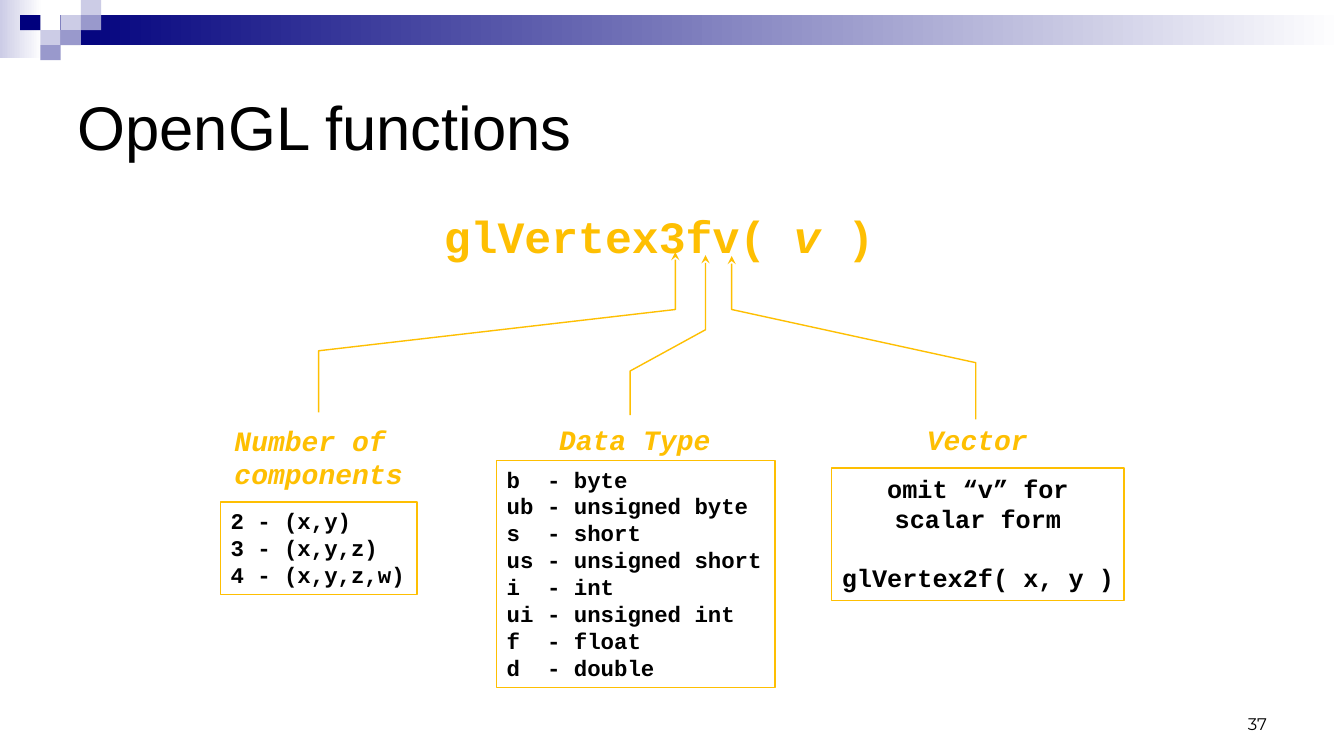
from lxml import etree
from pptx import Presentation
from pptx.dml.color import RGBColor
from pptx.enum.shapes import MSO_SHAPE as Shape
from pptx.enum.text import MSO_ANCHOR as Anchor, MSO_AUTO_SIZE as AutoSize, PP_ALIGN as Align
from pptx.oxml.ns import qn
from pptx.util import Cm, Pt

COLORS = {
    "navy": "00007D",
    "mid": "9999CC",
    "light": "CCCCE6",
    "white": "FFFFFF",
    "gold": "FEBF02",
    "black": "000000",
}
CODE_FONT = "Courier New"

# Header mosaic: cell size in cm, then column, row and colour of each tile
TILE_WIDTH, TILE_HEIGHT = 0.51, 0.38
TILES = [
    (3, 1, "light"), (4, 0, "light"), (4, 1, "mid"), (2, 2, "light"),
    (1, 1, "navy"), (3, 2, "mid"), (2, 3, "mid"),
]

# Headings and panels: text lines and box (left, top, width, height in cm)
HEADINGS = [
    (["Number of", "components"], (5.66, 10.54, 4.8, 1.96)),
    (["Data Type"], (13.84, 10.52, 4.37, 1.12)),
    (["Vector"], (23.11, 10.52, 3.07, 1.12)),
]
COMPONENTS = ["2 - (x,y)", "3 - (x,y,z)", "4 - (x,y,z,w)"]
DATA_TYPES = [
    ("b", "byte"), ("ub", "unsigned byte"), ("s", "short"), ("us", "unsigned short"),
    ("i", "int"), ("ui", "unsigned int"), ("f", "float"), ("d", "double"),
]
VECTOR_NOTE = ["omit “v” for", "scalar form", "glVertex2f( x, y )"]

# Arrows: tip x, tip y, upper bend y, foot x, lower bend y, foot y in cm
ARROWS = [
    (17.02, 6.35, 7.8, 8.03, 8.84, 10.39),
    (17.78, 6.43, 8.31, 15.88, 9.35, 10.46),
    (18.44, 6.45, 7.8, 24.59, 9.14, 10.57),
]


def color(name):
    return RGBColor.from_string(COLORS[name])


def lengths(box):
    return [Cm(value) for value in box]


def add_run(paragraph, text, size, color_name, font=CODE_FONT, bold=True, italic=False):
    run = paragraph.add_run()
    run.text = text
    run.font.name = font
    run.font.size = Pt(size)
    run.font.bold = bold
    run.font.italic = italic
    run.font.color.rgb = color(color_name)


def add_lines(frame, lines, size, color_name, align=Align.LEFT, italic=False):
    frame.word_wrap = False
    for index, line in enumerate(lines):
        paragraph = frame.paragraphs[0] if index == 0 else frame.add_paragraph()
        paragraph.alignment = align
        add_run(paragraph, line, size, color_name, italic=italic)


def add_block(slide, box, start, end=None):
    """Add a borderless rectangle, plain or fading from left to right."""
    shape = slide.shapes.add_shape(Shape.RECTANGLE, *lengths(box))
    shape.shadow.inherit = False
    shape.line.fill.background()
    if end:
        shape.fill.gradient()
        shape.fill.gradient_angle = 0
        for stop, name in zip(shape.fill.gradient_stops, (start, end)):
            stop.color.rgb = color(name)
    else:
        shape.fill.solid()
        shape.fill.fore_color.rgb = color(start)


def style_outline(shape):
    shape.shadow.inherit = False
    shape.fill.background()
    shape.line.color.rgb = color("gold")
    shape.line.width = Pt(1)


def add_panel(slide, lines, box, size, align=Align.LEFT):
    panel = slide.shapes.add_shape(Shape.RECTANGLE, *lengths(box))
    style_outline(panel)
    panel.text_frame.vertical_anchor = Anchor.TOP
    add_lines(panel.text_frame, lines, size, "black", align)
    return panel


def set_tab_stop(paragraph, position):
    properties = paragraph._p.get_or_add_pPr()
    tabs = etree.SubElement(properties, qn("a:tabLst"))
    etree.SubElement(tabs, qn("a:tab"), pos=str(position), algn="l")


def add_arrow(slide, tip_x, tip_y, upper_y, foot_x, lower_y, foot_y):
    builder = slide.shapes.build_freeform(Cm(tip_x), Cm(tip_y))
    points = [(tip_x, upper_y), (foot_x, lower_y), (foot_x, foot_y)]
    builder.add_line_segments([lengths(point) for point in points], close=False)
    arrow = builder.convert_to_shape()
    style_outline(arrow)
    etree.SubElement(arrow.line._get_or_add_ln(), qn("a:headEnd"), type="stealth")


def add_header(slide):
    add_block(slide, (0, 0, 1.07, 1.47), "light", "white")
    add_block(slide, (1.52, 0.38, 32.35, 0.76), "navy", "white")
    for column, row, name in TILES:
        box = (column * TILE_WIDTH, row * TILE_HEIGHT, TILE_WIDTH, TILE_HEIGHT)
        add_block(slide, box, name)


def set_title(slide, text):
    title = slide.shapes.title
    title.left, title.top, title.width, title.height = lengths((1.7, 1.27, 30.48, 3.81))
    frame = title.text_frame
    frame.auto_size = AutoSize.NONE
    frame.vertical_anchor = Anchor.MIDDLE
    frame.paragraphs[0].alignment = Align.LEFT
    add_run(frame.paragraphs[0], text, 44, "black", font="Arial", bold=False)


def add_function_call(slide):
    frame = slide.shapes.add_textbox(*lengths((10.87, 5.13, 11.48, 1.63))).text_frame
    frame.word_wrap = False
    paragraph = frame.paragraphs[0]
    paragraph.alignment = Align.CENTER
    for text, italic in (("glVertex3fv( ", False), ("v", True), (" )", False)):
        add_run(paragraph, text, 32, "gold", italic=italic)


def add_page_number(slide, number):
    frame = slide.shapes.add_textbox(*lengths((24.28, 17.35, 7.9, 1.27))).text_frame
    frame.word_wrap = True
    frame.vertical_anchor = Anchor.BOTTOM
    frame.paragraphs[0].alignment = Align.RIGHT
    add_run(frame.paragraphs[0], number, 12, "black", font="Montserrat", bold=False)


def main():
    presentation = Presentation()
    presentation.slide_width, presentation.slide_height = Cm(33.87), Cm(19.05)
    slide = presentation.slides.add_slide(presentation.slide_layouts[5])

    # Frame of the slide
    add_header(slide)
    set_title(slide, "OpenGL functions")
    add_page_number(slide, "37")

    # Function name and its three annotated parts
    add_function_call(slide)
    for lines, box in HEADINGS:
        heading = slide.shapes.add_textbox(*lengths(box))
        add_lines(heading.text_frame, lines, 20, "gold", italic=True)

    # Explanations
    add_panel(slide, COMPONENTS, (5.56, 12.65, 4.95, 2.34), 16)
    type_lines = [f"{suffix}\t- {name}" for suffix, name in DATA_TYPES]
    type_panel = add_panel(slide, type_lines, (12.52, 11.61, 7.01, 5.72), 16)
    for paragraph in type_panel.text_frame.paragraphs:
        set_tab_stop(paragraph, Cm(1.02))
    vector_panel = add_panel(slide, VECTOR_NOTE, (20.96, 11.79, 7.37, 3.35), 18, Align.CENTER)
    vector_panel.text_frame.paragraphs[-1].space_before = Pt(20.4)

    # Arrows up to the function name
    for arrow in ARROWS:
        add_arrow(slide, *arrow)

    presentation.save("out.pptx")


if __name__ == "__main__":
    main()
